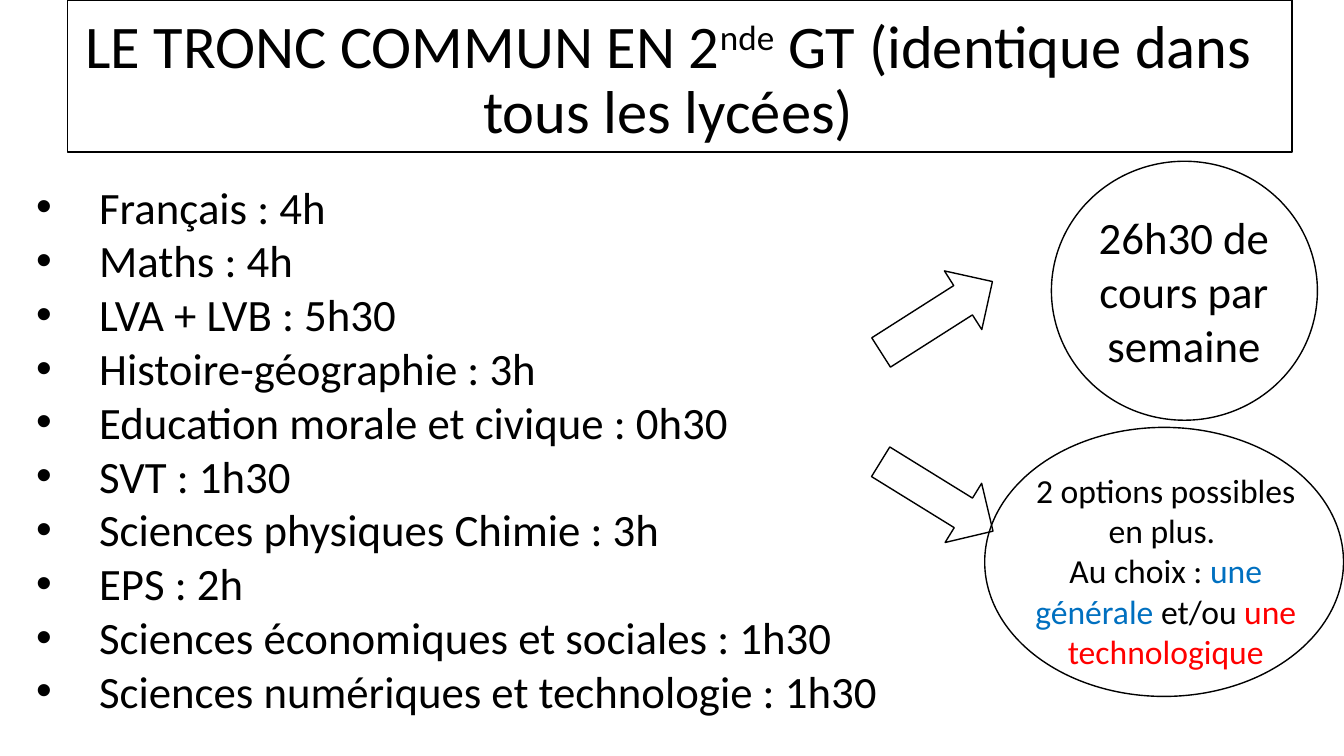
from lxml.etree import SubElement as Sub
from pptx import Presentation
from pptx.dml.color import RGBColor
from pptx.enum.shapes import MSO_SHAPE as Kind
from pptx.enum.text import MSO_ANCHOR as Anchor, MSO_AUTO_SIZE as Fit, PP_ALIGN as Align
from pptx.oxml.ns import qn
from pptx.util import Pt

BLACK = RGBColor(0, 0, 0)
BLUE = RGBColor(0x00, 0x70, 0xC0)
RED = RGBColor(0xFF, 0, 0)

COURSES = [
    "Français : 4h",
    "Maths : 4h",
    "LVA + LVB : 5h30",
    "Histoire-géographie : 3h",
    "Education morale et civique : 0h30",
    "SVT : 1h30",
    "Sciences physiques Chimie : 3h",
    "EPS : 2h",
    "Sciences économiques et sociales : 1h30",
    "Sciences numériques et technologie : 1h30",
]


class Page:
    font = "Calibri"
    indent = Pt(45)

    def __init__(self, slide):
        self.slide = slide

    def shape(self, kind, box, turn=0):
        """Draw an unfilled black outline."""
        item = self.slide.shapes.add_shape(kind, *map(Pt, box))
        item.shadow.inherit = False
        item.fill.background()
        item.line.color.rgb = BLACK
        item.line.width = Pt(1)
        item.rotation = turn

    def text(self, box, size, paras, align=Align.CENTER):
        """Each paragraph is a list of (words, colour) runs."""
        frame = self.slide.shapes.add_textbox(*map(Pt, box)).text_frame
        frame.word_wrap = True
        frame.auto_size = Fit.NONE
        for i, runs in enumerate(paras):
            para = frame.paragraphs[0] if i == 0 else frame.add_paragraph()
            para.alignment = align
            for words, color in runs:
                run = para.add_run()
                run.text = words
                run.font.name = self.font
                run.font.size = Pt(size)
                run.font.color.rgb = color
        return frame

    def title(self, box, size, head, sup, tail):
        """Centre a heading that has a superscript part."""
        runs = [(words, BLACK) for words in (head, sup, tail)]
        frame = self.text(box, size, [runs])
        frame.vertical_anchor = Anchor.MIDDLE
        para = frame.paragraphs[0]
        para.line_spacing = 0.9
        para.runs[1].font._element.set("baseline", "30000")

    def bullets(self, box, size, items):
        paras = [[(item, BLACK)] for item in items]
        frame = self.text(box, size, paras, Align.LEFT)
        for para in frame.paragraphs:
            props = para._p.get_or_add_pPr()
            props.set("marL", str(self.indent))
            props.set("indent", str(-self.indent))
            Sub(props, qn("a:buFont")).set("typeface", "Arial")
            Sub(props, qn("a:buChar")).set("char", "•")


def main():
    deck = Presentation()
    deck.slide_width, deck.slide_height = Pt(960), Pt(540)
    page = Page(deck.slides.add_slide(deck.slide_layouts[6]))

    page.title((18.7, 20.2, 917.3, 76.3), 43.2,
               "LE TRONC COMMUN EN 2", "nde", " GT (identique dans tous les lycées)")
    page.shape(Kind.RECTANGLE, (48.2, 0, 874.8, 108.7))
    page.bullets((18.7, 124.6, 627.8, 395.3), 32, COURSES)

    for top, turn in ((201.6, 327.5), (329.8, 31.7)):
        page.shape(Kind.RIGHT_ARROW, (622, top, 94.3, 49.7), turn)

    page.shape(Kind.OVAL, (751, 115.2, 190, 185))
    page.text((776.2, 146.2, 139, 123.8), 32,
              [[("26h30 de cours par semaine", BLACK)]])

    page.text((729.4, 331.9, 206.6, 152.6), 24, [
        [("2 options possibles en plus. ", BLACK)],
        [("Au choix : ", BLACK), ("une générale", BLUE),
         (" et/ou ", BLACK), ("une technologique", RED)],
    ])
    page.shape(Kind.OVAL, (703.4, 305.3, 256.3, 192.2))

    deck.save("out.pptx")


if __name__ == "__main__":
    main()
